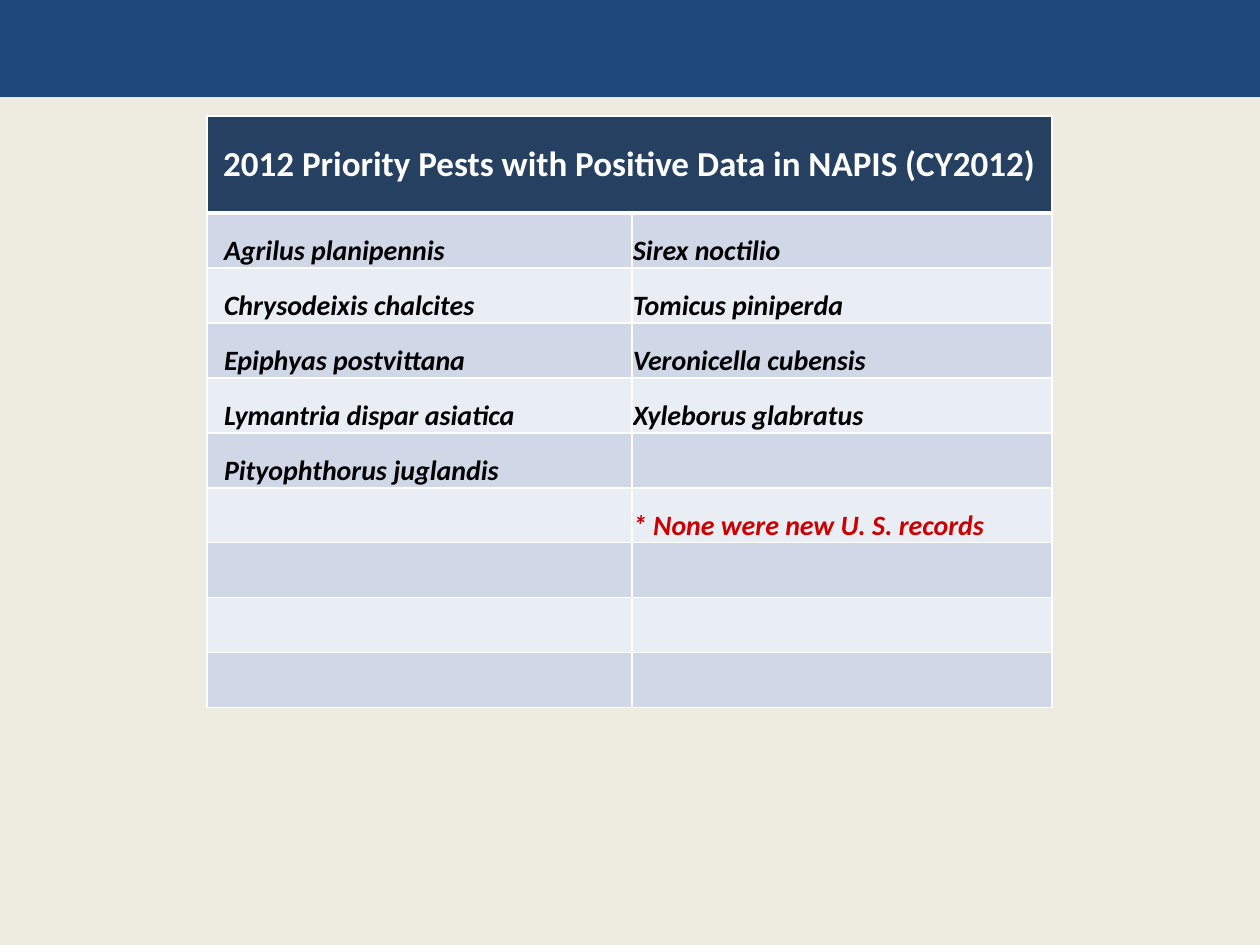
"""Build the slide listing 2012 priority pests with positive data."""
from typing import NamedTuple

from lxml import etree
from pptx import Presentation
from pptx.dml.color import RGBColor
from pptx.enum.shapes import MSO_SHAPE
from pptx.enum.text import MSO_ANCHOR, PP_ALIGN
from pptx.oxml.ns import qn
from pptx.util import Emu, Pt

RECTANGLE = MSO_SHAPE.RECTANGLE
MIDDLE, BOTTOM = MSO_ANCHOR.MIDDLE, MSO_ANCHOR.BOTTOM
LEFT, CENTER = PP_ALIGN.LEFT, PP_ALIGN.CENTER
BLANK_LAYOUT = 6
EMU_PER_PX = 914400 / 126

SLIDE_WIDTH, SLIDE_HEIGHT = 1260, 945
BAND_HEIGHT = 97
TABLE_LEFT, TABLE_TOP = 207, 116
COLUMN_WIDTHS = (425, 420)
HEADER_HEIGHT, ROW_HEIGHT = 97, 55
PEST_INDENT = 16

CREAM, NAVY, HEADER_BLUE = "EEECE1", "1F497D", "254061"
STRIPES = ("D0D8E8", "E9EDF4")
WHITE, BLACK, RED = "FFFFFF", "000000", "CC0000"

HEADING = "2012 Priority Pests with Positive Data in NAPIS (CY2012)"
NOTE = "* None were new U. S. records"
PEST_ROWS = (
    ("Agrilus planipennis", "Sirex noctilio"),
    ("Chrysodeixis chalcites", "Tomicus piniperda"),
    ("Epiphyas postvittana", "Veronicella cubensis"),
    ("Lymantria dispar asiatica", "Xyleborus glabratus"),
    ("Pityophthorus juglandis", ""),
    ("", NOTE),
    ("", ""),
    ("", ""),
    ("", ""),
)


class CellStyle(NamedTuple):
    color: str
    font: dict
    cell: dict
    align: PP_ALIGN = LEFT
    indent: int = 0


def px(length: int) -> Emu:
    """Turn whole pixels into EMU."""
    return Emu(round(length * EMU_PER_PX))


def rgb(value: str) -> RGBColor:
    """Turn a hex string into a colour."""
    return RGBColor.from_string(value)


def apply_format(target, values: dict) -> None:
    """Set every attribute in values on target."""
    for name, value in values.items():
        setattr(target, name, value)


HEADING_STYLE = CellStyle(
    WHITE,
    {"name": "Calibri", "size": Pt(20), "bold": True},
    {"vertical_anchor": MIDDLE},
    CENTER,
)
PEST_STYLE = CellStyle(
    BLACK,
    {"name": "Calibri", "size": Pt(16), "bold": True, "italic": True},
    {"vertical_anchor": BOTTOM, "margin_left": px(1), "margin_right": px(1),
     "margin_top": px(1), "margin_bottom": 0},
)


def set_borders(cell, top: int = 1, bottom: int = 1) -> None:
    """Draw white borders, with widths in points."""
    properties = cell._tc.get_or_add_tcPr()
    for edge, width in (("lnL", 1), ("lnR", 1), ("lnT", top), ("lnB", bottom)):
        line = etree.SubElement(properties, qn(f"a:{edge}"), w=str(Pt(width)))
        fill = etree.SubElement(line, qn("a:solidFill"))
        etree.SubElement(fill, qn("a:srgbClr"), val=WHITE)


def fill_cell(cell, color: str) -> None:
    """Give a cell a plain background."""
    cell.fill.solid()
    cell.fill.fore_color.rgb = rgb(color)


def write_cell(cell, wording: str, style: CellStyle) -> None:
    """Write formatted wording in a cell."""
    apply_format(cell, style.cell)
    paragraph = cell.text_frame.paragraphs[0]
    paragraph.alignment = style.align
    if style.indent:
        apply_format(paragraph._p.get_or_add_pPr(),
                     {}) or paragraph._p.get_or_add_pPr().set(
                         "marL", str(px(style.indent)))
    run = paragraph.add_run()
    run.text = wording
    apply_format(run.font, style.font)
    run.font.color.rgb = rgb(style.color)


def add_band(slide) -> None:
    """Add the band across the top of the slide."""
    band = slide.shapes.add_shape(
        RECTANGLE, 0, 0, px(SLIDE_WIDTH), px(BAND_HEIGHT))
    band.shadow.inherit = False
    band.fill.solid()
    band.fill.fore_color.rgb = rgb(NAVY)
    band.line.fill.background()


def add_pest_table(slide) -> None:
    """Add the table with its heading and striped pest rows."""
    height = HEADER_HEIGHT + ROW_HEIGHT * len(PEST_ROWS)
    table = slide.shapes.add_table(
        len(PEST_ROWS) + 1, len(COLUMN_WIDTHS), px(TABLE_LEFT), px(TABLE_TOP),
        px(sum(COLUMN_WIDTHS)), px(height)).table
    for column, width in zip(table.columns, COLUMN_WIDTHS):
        column.width = px(width)
    for row in table.rows:
        row.height = px(ROW_HEIGHT)
    table.rows[0].height = px(HEADER_HEIGHT)

    for header in table.rows[0].cells:
        set_borders(header, bottom=3)
        fill_cell(header, HEADER_BLUE)
    table.cell(0, 0).merge(table.cell(0, 1))
    write_cell(table.cell(0, 0), HEADING, HEADING_STYLE)

    for row_index, entries in enumerate(PEST_ROWS):
        for column_index, entry in enumerate(entries):
            cell = table.cell(row_index + 1, column_index)
            set_borders(cell, top=1 if row_index else 3)
            fill_cell(cell, STRIPES[row_index % 2])
            if entry:
                write_cell(cell, entry, PEST_STYLE._replace(
                    color=RED if entry == NOTE else BLACK,
                    indent=0 if column_index else PEST_INDENT))


def main() -> None:
    """Build and save the presentation."""
    deck = Presentation()
    apply_format(deck, {"slide_width": px(SLIDE_WIDTH),
                        "slide_height": px(SLIDE_HEIGHT)})
    slide = deck.slides.add_slide(deck.slide_layouts[BLANK_LAYOUT])
    slide.background.fill.solid()
    slide.background.fill.fore_color.rgb = rgb(CREAM)
    add_band(slide)
    add_pest_table(slide)
    deck.save("out.pptx")


if __name__ == "__main__":
    main()
